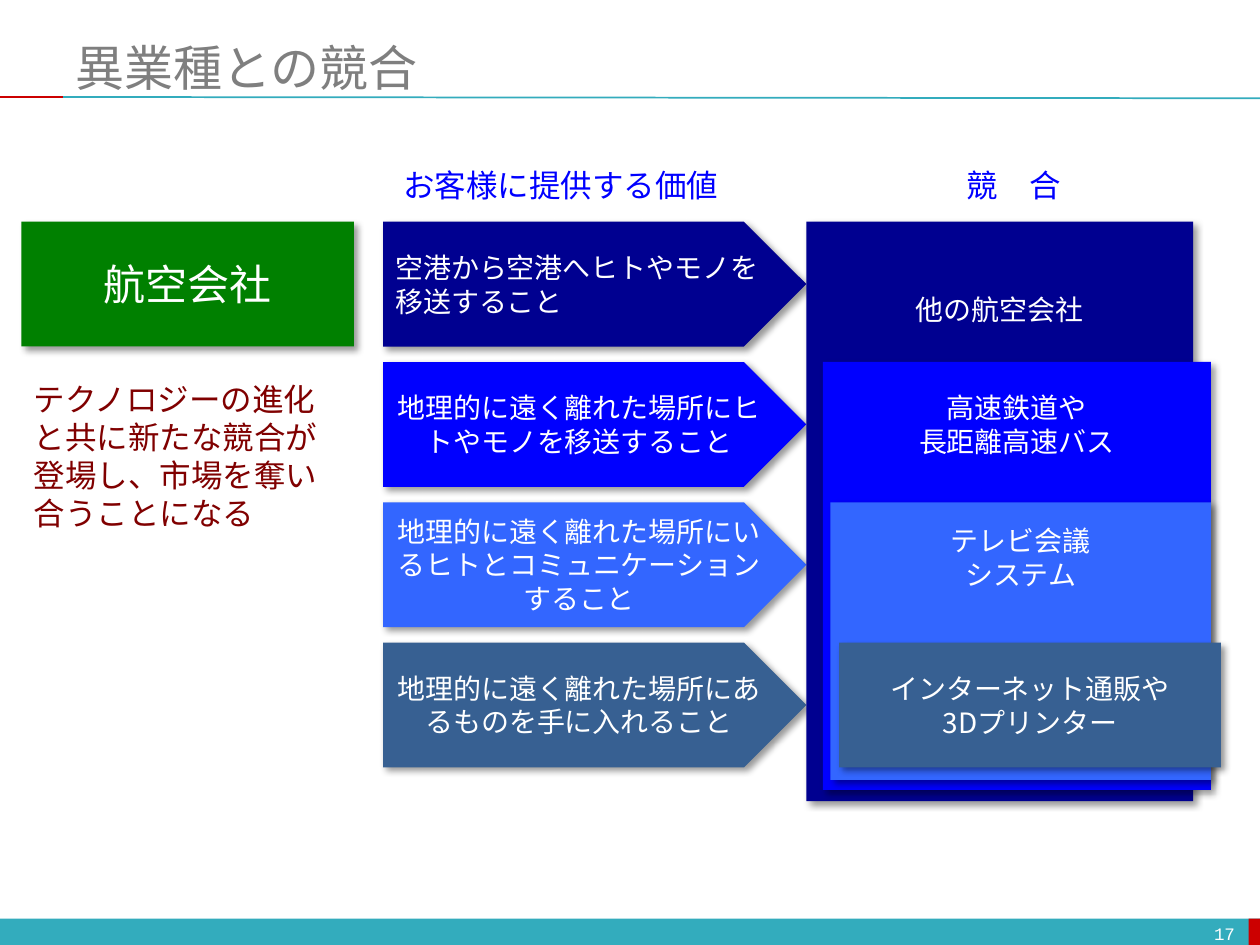
from lxml.etree import SubElement
from pptx import Presentation
from pptx.dml.color import RGBColor
from pptx.enum.shapes import MSO_CONNECTOR, MSO_SHAPE
from pptx.enum.text import MSO_ANCHOR, PP_ALIGN
from pptx.oxml import parse_xml
from pptx.oxml.ns import nsdecls, qn
from pptx.util import Inches, Pt

WHITE = RGBColor(0xFF, 0xFF, 0xFF)
GRAY = RGBColor(0x7F, 0x7F, 0x7F)
TEAL = RGBColor(0x33, 0xAC, 0xBD)
RED = RGBColor(0xCC, 0x00, 0x00)
GREEN = RGBColor(0x00, 0x80, 0x00)
MAROON = RGBColor(0x80, 0x00, 0x00)
NAVY = RGBColor(0x00, 0x00, 0x90)
BLUE = RGBColor(0x00, 0x00, 0xFF)
SKY = RGBColor(0x33, 0x66, 0xFF)
STEEL = RGBColor(0x37, 0x60, 0x92)
TONES = [NAVY, BLUE, SKY, STEEL]

SANS = "Noto Sans CJK JP"
LEFT, MID, RIGHT = PP_ALIGN.LEFT, PP_ALIGN.CENTER, PP_ALIGN.RIGHT

# Four rows, evenly spaced from the first top to the last
TOP, LAST, HIGH = 1.76, 5.1, 0.99
ROWS = [TOP + (LAST - TOP) / 3 * i for i in range(4)]

VALUES = [
    ("空港から空港へヒトやモノを移送すること", LEFT),
    ("地理的に遠く離れた場所にヒトやモノを移送すること", MID),
    ("地理的に遠く離れた場所にいるヒトとコミュニケーションすること", MID),
    ("地理的に遠く離れた場所にあるものを手に入れること", MID),
]
# Text, left, width, bottom, inset above the text
RIVALS = [
    ("他の航空会社", 6.4, 3.07, 6.36, 0.56),
    ("高速鉄道や\n長距離高速バス", 6.53, 3.08, 6.27, 0.23),
    ("テレビ会議\nシステム", 6.59, 3.02, 6.19, 0.17),
    ("インターネット通販や\n3Dプリンター", 6.66, 3.03, 6.09, 0.23),
]


def write(shape, text, size=16, color=WHITE, font=SANS, align=MID,
          anchor=MSO_ANCHOR.MIDDLE, inset=0.05):
    frame = shape.text_frame
    frame.word_wrap = True
    frame.vertical_anchor = anchor
    frame.margin_top = Inches(inset)
    frame.text = text
    for para in frame.paragraphs:
        para.alignment = align
        for run in para.runs:
            run.font.size = Pt(size)
            run.font.name = font
            run.font.color.rgb = color
            east = SubElement(run.font._element, qn("a:ea"))
            east.set("typeface", SANS)


def label(slide, box, text, **style):
    shape = slide.shapes.add_textbox(*map(Inches, box))
    write(shape, text, **style)


def block(slide, box, fill, kind=MSO_SHAPE.RECTANGLE, shade=True):
    shape = slide.shapes.add_shape(kind, *map(Inches, box))
    shape.fill.solid()
    shape.fill.fore_color.rgb = fill
    shape.line.fill.background()
    shape.shadow.inherit = False
    if shade:
        effect = shape._element.spPr.find(qn("a:effectLst"))
        effect.append(parse_xml(
            f'<a:outerShdw {nsdecls("a")} blurRad="{Pt(4)}" dist="{Pt(3)}" '
            'dir="2700000" algn="tl" rotWithShape="0"><a:srgbClr val="000000">'
            '<a:alpha val="40000"/></a:srgbClr></a:outerShdw>'))
    return shape


def rule(slide, ends, color):
    line = slide.shapes.add_connector(MSO_CONNECTOR.STRAIGHT,
                                      *map(Inches, ends))
    line.line.color.rgb = color
    line.line.width = Pt(1)
    SubElement(line._element.spPr, qn("a:effectLst"))


def header(slide, box):
    left, top, width, height = box
    base = top + height + 0.01
    rule(slide, (left, base, 10, base + 0.01), TEAL)
    rule(slide, (0, base, left, base), RED)
    title = slide.shapes.title
    title.left, title.top, title.width, title.height = map(Inches, box)
    write(title, "異業種との競合", size=28, color=GRAY, font="Calibri",
          align=LEFT)


def footer(slide, box):
    left, top, width, height = box
    block(slide, box, TEAL, shade=False)
    block(slide, (left + width - 0.09, top, 0.1, height), RED, shade=False)
    label(slide, (7.57, top, 2.33, 0.24), "17", size=10, font="Courier New",
          align=RIGHT)


def sector(slide, box):
    left, top, width, height = box
    write(block(slide, (left, top, width, HIGH), GREEN), "航空会社", size=24)
    label(slide, (left, top + 1.21, width, height - 1.21),
          "テクノロジーの進化と共に新たな競合が登場し、市場を奪い合うことになる",
          size=18, color=MAROON, align=LEFT, anchor=MSO_ANCHOR.TOP)


def heading(slide, box, text):
    label(slide, box, text, size=18, color=BLUE, anchor=MSO_ANCHOR.TOP)


def values(slide, left, width):
    heading(slide, (left, 1.27, 2.82, 0.4), "お客様に提供する価値")
    for (text, align), top, tone in zip(VALUES, ROWS, TONES):
        arrow = block(slide, (left, top, width, HIGH), tone,
                      MSO_SHAPE.PENTAGON)
        write(arrow, text, align=align)


def rivals(slide, left, width):
    heading(slide, (left, 1.27, width, 0.4), "競　合")
    for (text, x, wide, end, inset), top, tone in zip(RIVALS, ROWS, TONES):
        card = block(slide, (x, top, wide, end - top), tone)
        write(card, text, anchor=MSO_ANCHOR.TOP, inset=inset)


def main():
    deck = Presentation()
    deck.slide_width, deck.slide_height = Inches(10), Inches(7.5)
    slide = deck.slides.add_slide(deck.slide_layouts[5])
    footer(slide, (0, 7.29, 10, 0.22))
    header(slide, (0.5, 0.3, 9.5, 0.46))
    sector(slide, (0.17, TOP, 2.64, 2.52))
    values(slide, 3.04, 3.36)
    rivals(slide, 6.4, 3.29)
    deck.save("out.pptx")


if __name__ == "__main__":
    main()
